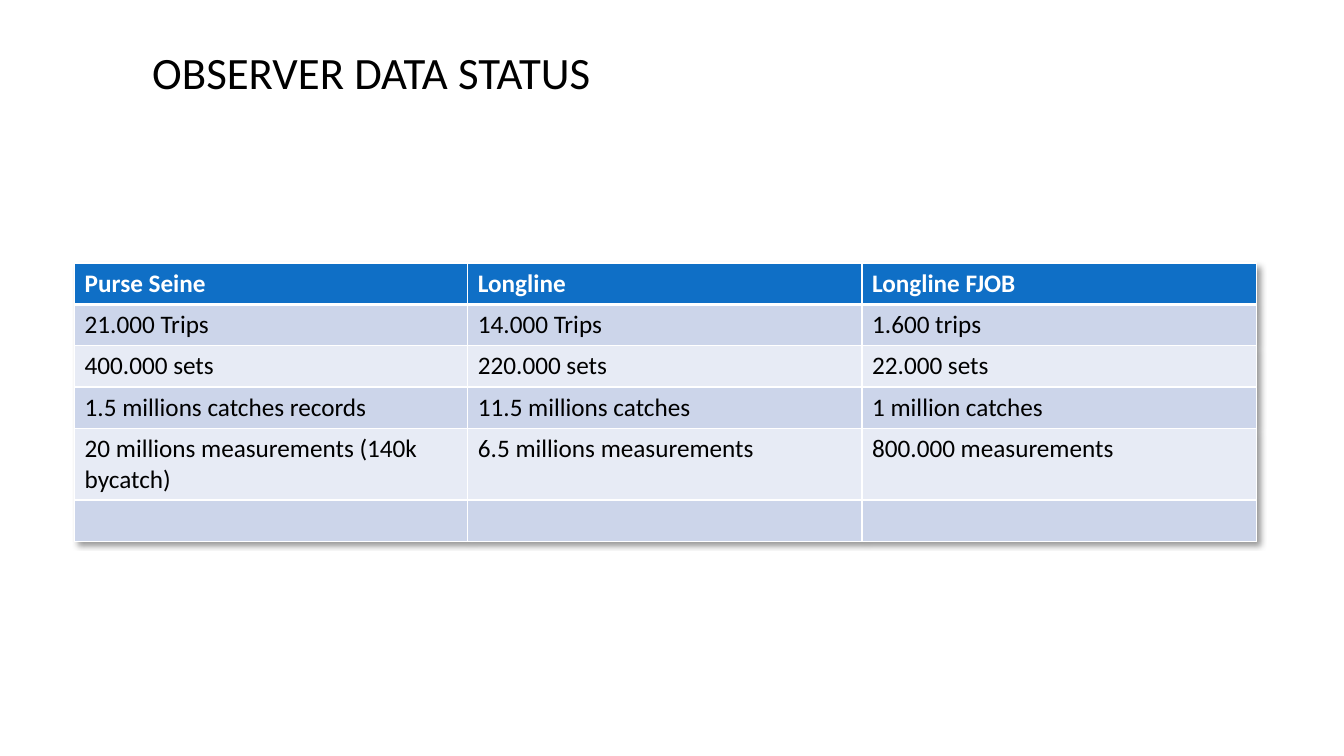
from lxml import etree
from pptx import Presentation
from pptx.dml.color import RGBColor
from pptx.enum.text import MSO_ANCHOR, PP_ALIGN
from pptx.oxml.ns import qn
from pptx.util import Pt

PX = 9144
LEFT = PP_ALIGN.LEFT
TOP = MSO_ANCHOR.TOP
TITLE_ONLY = 5
COLORS = {
    "header": "0F6FC6",
    "odd": "CCD5EA",
    "even": "E7EBF5",
    "border": "FFFFFF",
    "light": "FFFFFF",
    "text": "000000",
    "shadow": "000000",
}
ROWS = [
    ["Purse Seine", "Longline", "Longline FJOB"],
    ["21.000 Trips", "14.000 Trips", "1.600 trips"],
    ["400.000 sets", "220.000 sets", "22.000 sets"],
    ["1.5 millions catches records", "11.5 millions catches", "1 million catches"],
    ["20 millions measurements (140k bycatch)", "6.5 millions measurements",
     "800.000 measurements"],
    ["", "", ""],
]
COLUMN_WIDTHS = [390, 391, 391]
ROW_HEIGHT = 41


def px(n):
    """Turn whole px into EMU."""
    return n * PX


def rgb(name):
    """Look up a named colour."""
    return RGBColor.from_string(COLORS[name])


def format_font(font, color, **values):
    """Set the colour and the given attributes of a font."""
    font.color.rgb = rgb(color)
    for key, value in {"name": "Calibri", **values}.items():
        setattr(font, key, value)


def add_color(parent, name):
    """Append a colour element and return it."""
    return etree.SubElement(parent, qn("a:srgbClr"), val=COLORS[name])


def set_borders(cell, bottom):
    """Draw the four borders of a cell, the bottom one in its own width."""
    tc_pr = cell._tc.get_or_add_tcPr()
    for side, width in {"L": 1, "R": 1, "T": 1, "B": bottom}.items():
        line = etree.SubElement(tc_pr, qn(f"a:ln{side}"), w=str(Pt(width)))
        add_color(etree.SubElement(line, qn("a:solidFill")), "border")


def add_table_shadow(table):
    """Give the table a soft shadow to the lower right."""
    effects = etree.Element(qn("a:effectLst"))
    shadow = etree.SubElement(effects, qn("a:outerShdw"), blurRad="50800",
                              dist="38100", dir="2700000", algn="tl", rotWithShape="0")
    etree.SubElement(add_color(shadow, "shadow"), qn("a:alpha"), val="40000")
    table._tbl.tblPr.insert(0, effects)


def fill_cell(cell, text, row):
    """Write and format one cell according to its row."""
    header = row == 0
    set_borders(cell, 3 if header else 1)
    cell.fill.solid()
    cell.fill.fore_color.rgb = rgb("header" if header else "odd" if row % 2 else "even")
    p = cell.text_frame.paragraphs[0]
    format_font(p.font, "light" if header else "text", size=Pt(18), bold=header)
    if text:
        r = p.add_run()
        r.text = text
        format_font(r.font, "light" if header else "text", size=Pt(18), bold=header)


def add_status_table(s):
    """Add the table of observer data."""
    frame = s.shapes.add_table(len(ROWS), len(COLUMN_WIDTHS), px(74), px(261),
                               px(sum(COLUMN_WIDTHS)), px(ROW_HEIGHT * len(ROWS)))
    table = frame.table
    for column, width in zip(table.columns, COLUMN_WIDTHS):
        column.width = px(width)
    for i, texts in enumerate(ROWS):
        table.rows[i].height = px(ROW_HEIGHT)
        for j, text in enumerate(texts):
            fill_cell(table.cell(i, j), text, i)
    add_table_shadow(table)


def set_title(s, text):
    """Place and format the title."""
    sp = s.shapes.title
    sp.left, sp.top, sp.width, sp.height = px(141), px(45), px(959), px(115)
    tf = sp.text_frame
    tf.text = text
    tf.vertical_anchor = TOP
    p = tf.paragraphs[0]
    p.alignment = LEFT
    p.line_spacing = 0.9
    format_font(p.runs[0].font, "text", size=Pt(32))


def main():
    """Build the slide and save it."""
    prs = Presentation()
    prs.slide_width, prs.slide_height = px(1333), px(750)
    s = prs.slides.add_slide(prs.slide_layouts[TITLE_ONLY])
    add_status_table(s)
    set_title(s, "OBSERVER DATA STATUS")
    prs.save("out.pptx")


if __name__ == "__main__":
    main()
